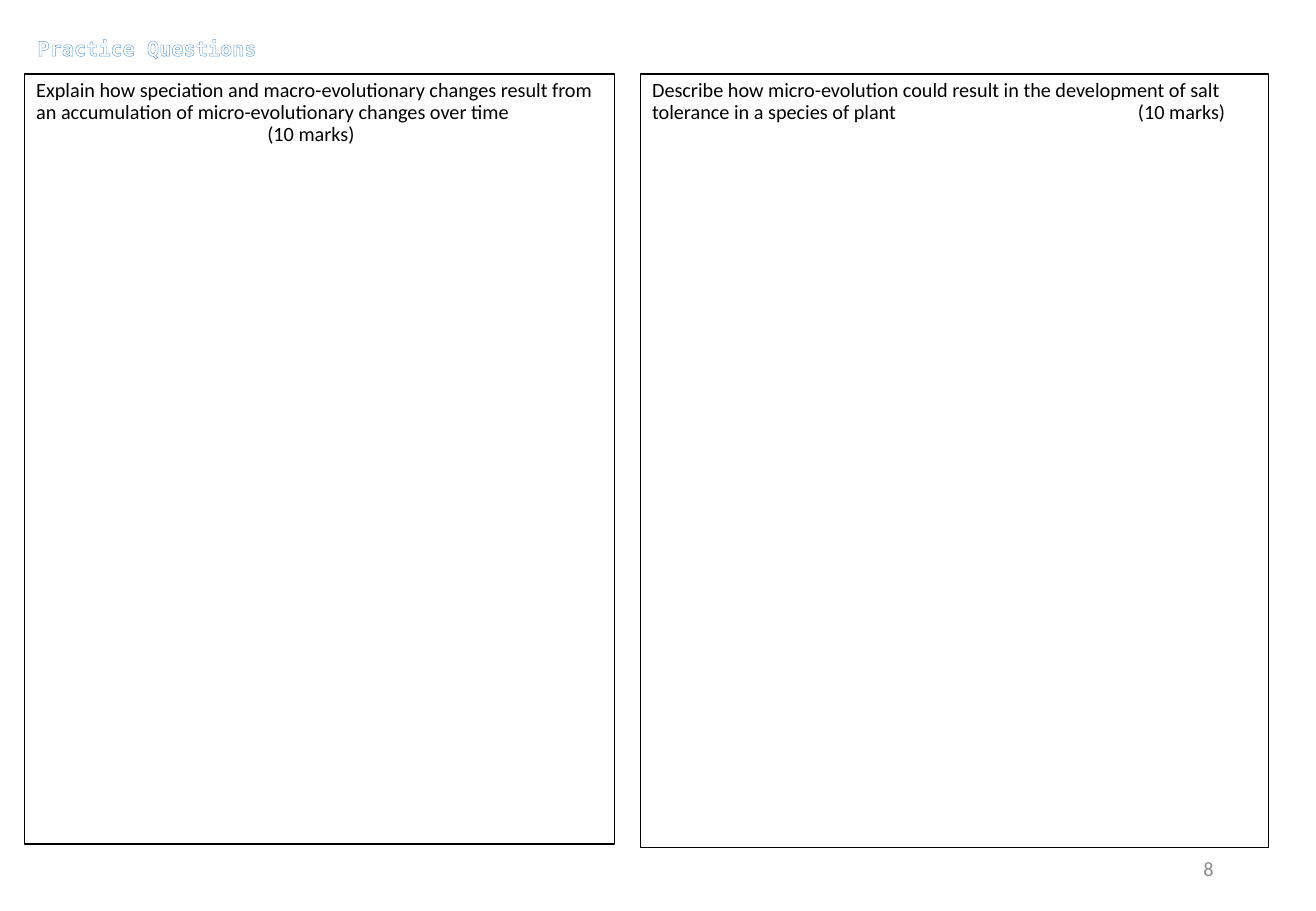
from lxml import etree
from pptx import Presentation
from pptx import util as u
from pptx.dml.color import RGBColor
from pptx.enum import shapes, text
from pptx.oxml import ns

COLOURS = {"ink": "000000", "paper": "FFFFFF", "title": "5B9BD5", "number": "8C8C8C"}
TITLE_BOX = (15.12, 1.44, 720.72, 54)
NUMBER_BOX = (550.8, 500.4, 175.68, 28.8)
QUESTIONS = [
    ((14.4, 43.92, 349.92, 456.48), 137,
     "Explain how speciation and macro-evolutionary changes result from "
     "an accumulation of micro-evolutionary changes over time\v\t(10 marks)"),
    ((379.44, 43.92, 372.24, 458.64), 288,
     "Describe how micro-evolution could result in the development of salt "
     "tolerance in a species of plant\t(10 marks)"),
]


def colour(name):
    """Return the named colour."""
    return RGBColor.from_string(COLOURS[name])


def add_span(para, words, font, ink):
    """Add one 12 point run to a paragraph."""
    span = para.add_run()
    span.text = words
    span.font.name = font
    span.font.size = u.Pt(12)
    span.font.color.rgb = colour(ink)
    return span


def add_label(page, box, words, font, ink, align):
    """Add a one-line label centred vertically in its box."""
    frame = page.shapes.add_textbox(*map(u.Pt, box)).text_frame
    frame.word_wrap = True
    frame.vertical_anchor = text.MSO_ANCHOR.MIDDLE
    para = frame.paragraphs[0]
    para.alignment = align
    return add_span(para, words, font, ink)


def add_title(page, box):
    """Add the outlined heading."""
    span = add_label(page, box, "Practice Questions", "DejaVu Sans Mono",
                     "paper", text.PP_ALIGN.LEFT)
    span.font.bold = True
    outline = etree.Element(ns.qn("a:ln"), w=str(u.Pt(0.8)))
    fill = etree.SubElement(outline, ns.qn("a:solidFill"))
    etree.SubElement(fill, ns.qn("a:srgbClr"), val=COLOURS["title"])
    span.font._element.insert(0, outline)


def add_question(page, box, marks_stop, question):
    """Add a framed answer space headed by its question and marks."""
    frame = page.shapes.add_shape(shapes.MSO_SHAPE.RECTANGLE, *map(u.Pt, box))
    frame.shadow.inherit = False
    frame.fill.background()
    frame.line.color.rgb = colour("ink")
    frame.line.width = u.Pt(0.75)
    frame.text_frame.word_wrap = True
    frame.text_frame.vertical_anchor = text.MSO_ANCHOR.TOP
    para = frame.text_frame.paragraphs[0]
    para.alignment = text.PP_ALIGN.LEFT
    para.line_spacing = 0.9
    para.space_before = u.Pt(10)
    stops = etree.SubElement(para._p.get_or_add_pPr(), ns.qn("a:tabLst"))
    etree.SubElement(stops, ns.qn("a:tab"), pos=str(u.Pt(marks_stop)), algn="l")
    for index, part in enumerate(question.split("\v")):
        if index:
            para.add_line_break()
        add_span(para, part, "Calibri", "ink")


def build_practice_page(deck):
    """Add the page of practice questions."""
    page = deck.slides.add_slide(deck.slide_layouts[6])
    add_label(page, NUMBER_BOX, "8", "Calibri", "number", text.PP_ALIGN.RIGHT)
    add_title(page, TITLE_BOX)
    for box, marks_stop, question in QUESTIONS:
        add_question(page, box, marks_stop, question)


def main():
    """Build and save the deck."""
    deck = Presentation()
    deck.slide_width, deck.slide_height = u.Pt(780), u.Pt(540)
    build_practice_page(deck)
    deck.save("out.pptx")


if __name__ == "__main__":
    main()
